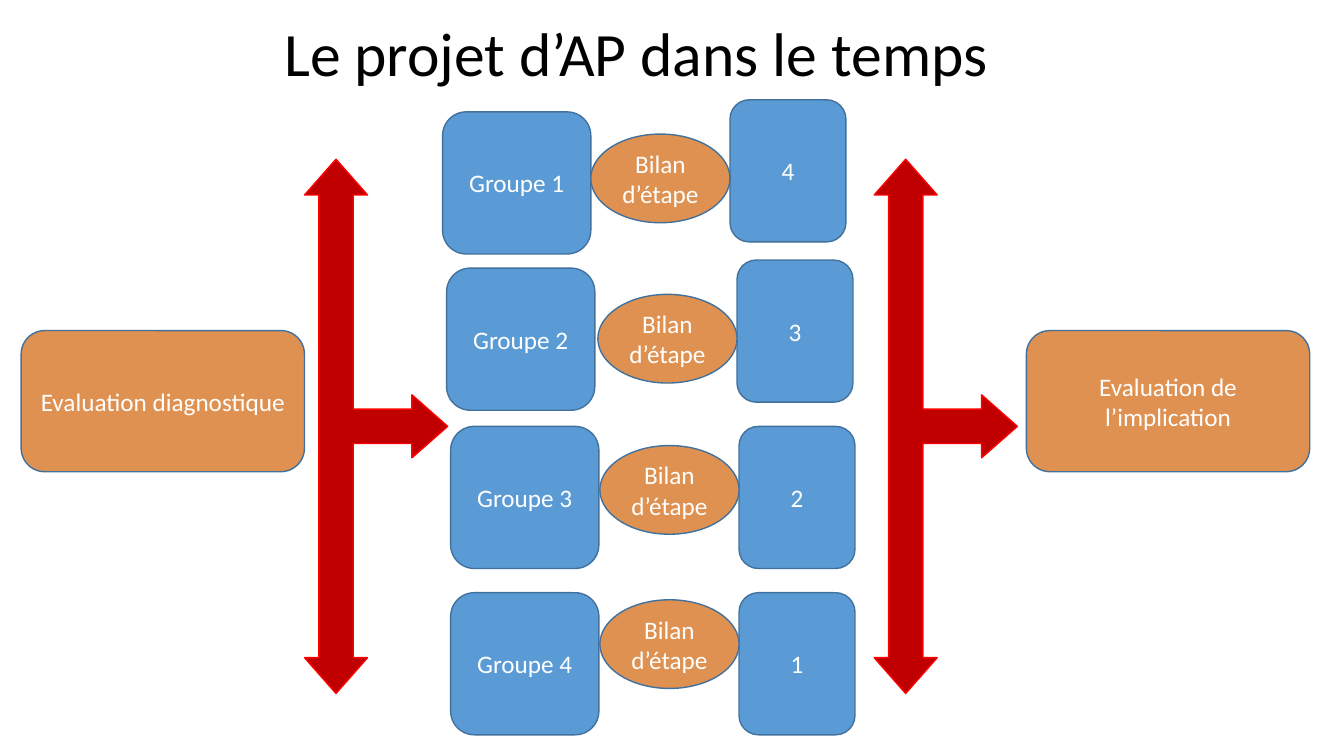
from pptx import Presentation
from pptx.dml.color import RGBColor
from pptx.enum.shapes import MSO_SHAPE
from pptx.enum.text import MSO_ANCHOR, PP_ALIGN
from pptx.util import Inches, Pt

THEME = {
    "orange": RGBColor.from_string("DF9151"),
    "blue": RGBColor.from_string("5B9BD5"),
    "outline": RGBColor.from_string("41719C"),
    "red": RGBColor.from_string("C00000"),
    "red_outline": RGBColor.from_string("FF0000"),
    "white": RGBColor.from_string("FFFFFF"),
    "black": RGBColor.from_string("000000"),
    "font": "Calibri",
    "title_size": Pt(44),
    "body_size": Pt(18),
}


def add_text(sp, text, size, color, align):
    tf = sp.text_frame
    for name, value in {"word_wrap": True, "vertical_anchor": MSO_ANCHOR.MIDDLE}.items():
        setattr(tf, name, value)
    p = tf.paragraphs[0]
    p.alignment = align
    r = p.add_run()
    r.text = text
    for name, value in {"name": THEME["font"], "size": THEME[size]}.items():
        setattr(r.font, name, value)
    r.font.color.rgb = THEME[color]
    return p


def add_box(kind, x, y, w, h, fill, line="outline", text=None):
    sp = s.shapes.add_shape(kind, Inches(x), Inches(y), Inches(w), Inches(h))
    sp.shadow.inherit = False
    sp.fill.solid()
    sp.fill.fore_color.rgb = THEME[fill]
    sp.line.color.rgb = THEME[line]
    sp.line.width = Pt(1)
    if text:
        add_text(sp, text, "body_size", "white", PP_ALIGN.CENTER)
    return sp


prs = Presentation()
prs.slide_width = Inches(13.33)
prs.slide_height = Inches(7.5)
s = prs.slides.add_slide(prs.slide_layouts[6])

for x, text in [(0.21, "Evaluation diagnostique"), (10.18, "Evaluation de l’implication")]:
    add_box(MSO_SHAPE.ROUNDED_RECTANGLE, x, 3.28, 2.81, 1.4, "orange", text=text)

for x in (1.08, 6.73):
    arrow = add_box(MSO_SHAPE.LEFT_RIGHT_UP_ARROW, x, 3.52, 5.3, 1.42, "red", "red_outline")
    arrow.rotation = 90
    for i, value in enumerate((0.24, 0.22, 0.25)):
        arrow.adjustments[i] = value

rows = [
    ((4.39, 1.11), (5.86, 1.33), (7.24, 0.99)),
    ((4.43, 2.66), (5.93, 2.92), (7.31, 2.58)),
    ((4.47, 4.23), (5.95, 4.42), (7.33, 4.23)),
    ((4.47, 5.88), (5.95, 5.95), (7.33, 5.88)),
]
for i, (group, review, rank) in enumerate(rows):
    add_box(MSO_SHAPE.ROUNDED_RECTANGLE, *group, 1.47, 1.41, "blue", text=f"Groupe {i + 1}")
    add_box(MSO_SHAPE.ROUNDED_RECTANGLE, *rank, 1.15, 1.41, "blue", text=str(len(rows) - i))
    add_box(MSO_SHAPE.OVAL, *review, 1.38, 0.88, "orange", text="Bilan d’étape")

title = s.shapes.add_textbox(Inches(2.72), Inches(-0.14), Inches(9.75), Inches(1.4))
p = add_text(title, "Le projet d’AP dans le temps", "title_size", "black", PP_ALIGN.LEFT)
p.line_spacing = 0.9

prs.save("out.pptx")
